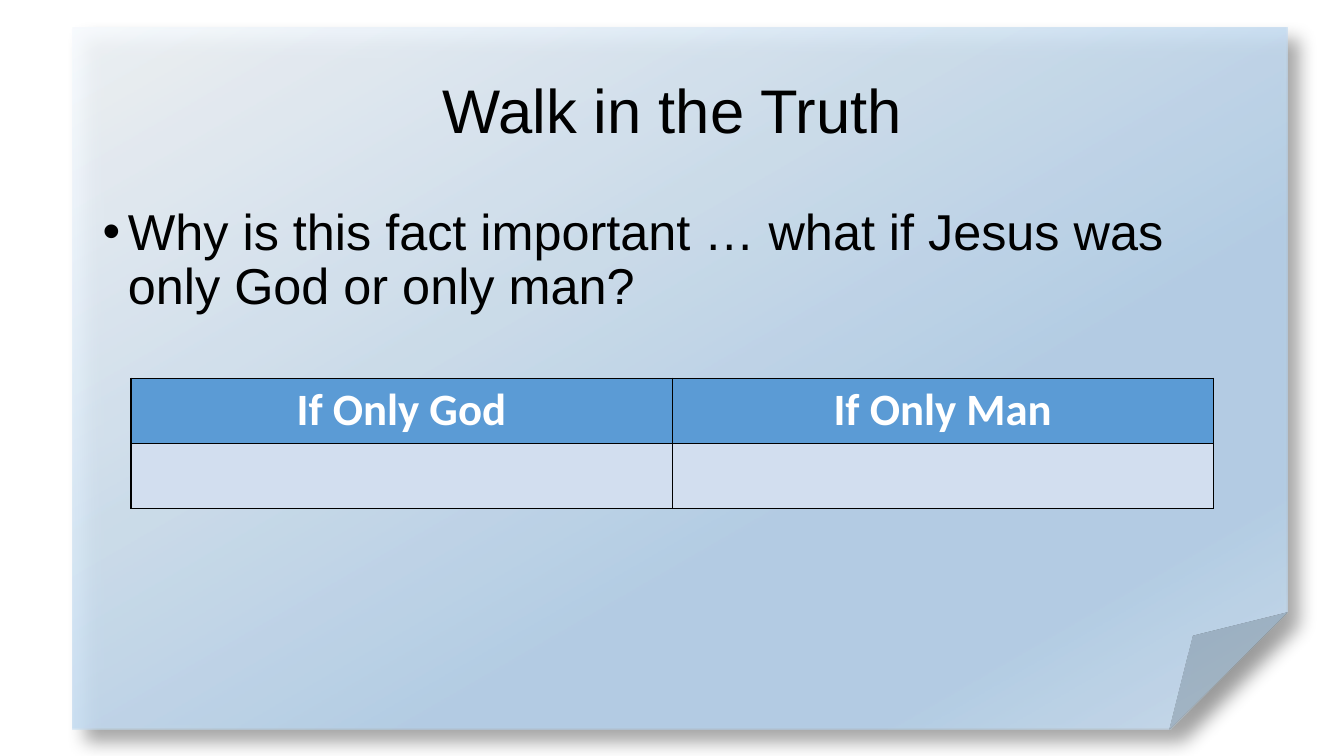
"""Build the "Walk in the Truth" slide with its folded page and comparison table."""
from pptx import Presentation
from pptx import util as u
from pptx.dml.color import RGBColor
from pptx.enum import shapes, text
from pptx.oxml import parse_xml
from pptx.oxml.ns import nsdecls, qn

BLACK = RGBColor(0x00, 0x00, 0x00)
WHITE = RGBColor(0xFF, 0xFF, 0xFF)
HEADER_BLUE = RGBColor(0x5B, 0x9B, 0xD5)
CELL_BLUE = RGBColor(0xD2, 0xDE, 0xEF)
PAGE_STOPS = [
    (0, RGBColor(0xF7, 0xFA, 0xFD)),
    (64, RGBColor(0xB5, 0xD2, 0xEC)),
    (83, RGBColor(0xB5, 0xD2, 0xEC)),
    (100, RGBColor(0xCE, 0xE1, 0xF2)),
]


def add_run(paragraph, words, size, font_name, color, bold=False):
    run = paragraph.add_run()
    run.text = words
    run.font.size = u.Pt(size)
    run.font.name = font_name
    run.font.bold = bold
    run.font.color.rgb = color


presentation = Presentation()
presentation.slide_width = u.Cm(33.87)
presentation.slide_height = u.Cm(19.05)
slide = presentation.slides.add_slide(presentation.slide_layouts[5])

page = slide.shapes.add_shape(
    shapes.MSO_SHAPE.FOLDED_CORNER, u.Cm(1.83), u.Cm(0.69), u.Cm(30.61), u.Cm(17.7))
page.line.fill.background()
page.fill.background()
page.shadow.inherit = False
stops = "".join(
    f'<a:gs pos="{position * 1000}"><a:srgbClr val="{color}"><a:alpha val="87000"/></a:srgbClr></a:gs>'
    for position, color in PAGE_STOPS)
gradient = parse_xml(
    f'<a:gradFill {nsdecls("a")} rotWithShape="1"><a:gsLst>{stops}</a:gsLst>'
    '<a:lin ang="3600000" scaled="0"/></a:gradFill>')
properties = page._element.spPr
properties.replace(properties.find(qn("a:noFill")), gradient)
properties.find(qn("a:effectLst")).append(parse_xml(
    f'<a:outerShdw {nsdecls("a")} blurRad="{u.Pt(13)}" dist="{u.Pt(13)}" dir="2700000" algn="tl" '
    f'rotWithShape="0"><a:srgbClr val="{BLACK}"><a:alpha val="40000"/></a:srgbClr></a:outerShdw>'))
slide.shapes._spTree.insert(2, page._element)

title = slide.shapes.title
title.left, title.top, title.width, title.height = u.Cm(2.34), u.Cm(1.02), u.Cm(29.21), u.Cm(3.68)
title.text_frame.vertical_anchor = text.MSO_ANCHOR.MIDDLE
paragraph = title.text_frame.paragraphs[0]
paragraph.alignment = text.PP_ALIGN.CENTER
paragraph.line_spacing = 0.9
add_run(paragraph, "Walk in the Truth", 44, "Arial", BLACK)

question = slide.shapes.add_textbox(u.Cm(2.34), u.Cm(5.08), u.Cm(29.21), u.Cm(12.09))
question.text_frame.word_wrap = True
paragraph = question.text_frame.paragraphs[0]
paragraph.line_spacing = 0.9
bullet = paragraph._p.get_or_add_pPr()
bullet.set("marL", str(u.Pt(18)))
bullet.set("indent", str(-u.Pt(18)))
bullet.append(parse_xml(f'<a:buFont {nsdecls("a")} typeface="Arial"/>'))
bullet.append(parse_xml(f'<a:buChar {nsdecls("a")} char="•"/>'))
add_run(paragraph, "Why is this fact important … what if Jesus was only God or only man?",
        36, "Arial", BLACK)

table = slide.shapes.add_table(2, 2, u.Cm(3.3), u.Cm(9.53), u.Cm(27.28), u.Cm(3.28)).table
table.horz_banding = False
rows = [(HEADER_BLUE, ["If Only God", "If Only Man"]), (CELL_BLUE, ["", ""])]
for row_index, (fill_color, labels) in enumerate(rows):
    for column_index, label in enumerate(labels):
        cell = table.cell(row_index, column_index)
        cell_properties = cell._tc.get_or_add_tcPr()
        for side in ("lnL", "lnR", "lnT", "lnB"):
            cell_properties.append(parse_xml(
                f'<a:{side} {nsdecls("a")} w="{u.Pt(1)}"><a:solidFill>'
                f'<a:srgbClr val="{BLACK}"/></a:solidFill></a:{side}>'))
        cell.fill.solid()
        cell.fill.fore_color.rgb = fill_color
        if label:
            paragraph = cell.text_frame.paragraphs[0]
            paragraph.alignment = text.PP_ALIGN.CENTER
            add_run(paragraph, label, 32, "Calibri", WHITE, bold=True)

presentation.save("out.pptx")
